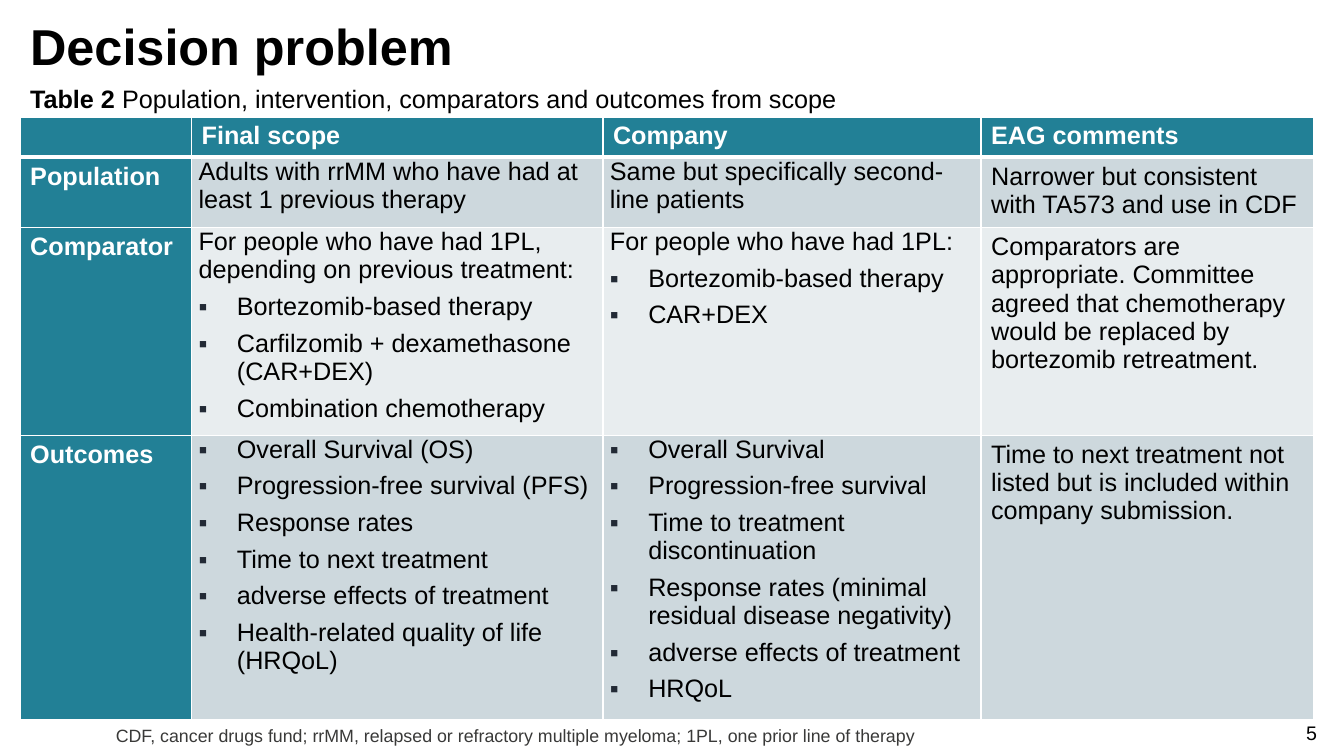
import pptx
import pptx.util
import pptx.dml.color
import pptx.enum.text
import pptx.oxml

Inches, Pt = pptx.util.Inches, pptx.util.Pt
ALIGN = pptx.enum.text.PP_ALIGN
NS = 'xmlns:a="http://schemas.openxmlformats.org/drawingml/2006/main"'
TEAL, DARK, LIGHT = "228096", "CDD8DD", "E8EDEF"
WHITE, BLACK, GREY = "FFFFFF", "000000", "393938"


def color(text):
    return pptx.dml.color.RGBColor.from_string(text)


def apply(target, values):
    for name, value in values.items():
        setattr(target, name, value)


class Deck:
    font = "Arial"
    bullet = "▪"
    mark = "222A35"

    def __init__(self):
        self.prs = pptx.Presentation()
        apply(self.prs, {"slide_width": Inches(13.33),
                         "slide_height": Inches(7.5)})
        self.slide = self.prs.slides.add_slide(self.prs.slide_layouts[6])

    def run(self, para, text, size=18, hue=BLACK, bold=False):
        run = para.add_run()
        run.text = text
        apply(run.font, {"name": self.font, "size": Pt(size), "bold": bold})
        run.font.color.rgb = color(hue)

    def text(self, box, runs, wrap=True, **form):
        """Add a text box; each run is (text, format)."""
        shape = self.slide.shapes.add_textbox(*map(Inches, box))
        shape.text_frame.word_wrap = wrap
        para = shape.text_frame.paragraphs[0]
        apply(para, form)
        for words, style in runs:
            self.run(para, words, **style)

    def dot(self, para):
        """Turn a paragraph into a bullet with a hanging indent."""
        props = para._p.get_or_add_pPr()
        props.set("marL", str(Inches(0.38)))
        props.set("indent", str(-Inches(0.38)))
        for part in (f'<a:buClr {NS}><a:srgbClr val="{self.mark}"/></a:buClr>',
                     f'<a:buFont {NS} typeface="{self.font}"/>',
                     f'<a:buChar {NS} char="{self.bullet}"/>'):
            props.append(pptx.oxml.parse_xml(part))

    def edges(self, cell, widths):
        """Draw white borders; widths maps a side letter to points."""
        props = cell._tc.get_or_add_tcPr()
        for side, width in widths.items():
            props.append(pptx.oxml.parse_xml(
                f'<a:ln{side} {NS} w="{Pt(width)}"><a:solidFill>'
                f'<a:srgbClr val="{WHITE}"/></a:solidFill></a:ln{side}>'))

    def cell(self, cell, lines, fill, head, tight):
        """Fill a cell; a line that starts with the bullet becomes one."""
        if tight:
            apply(cell, {"margin_left": Inches(0.07), "margin_top": 0,
                         "margin_right": Inches(0.07), "margin_bottom": 0})
        frame = cell.text_frame
        for i, line in enumerate(lines):
            para = frame.add_paragraph() if i else frame.paragraphs[0]
            if len(lines) > 1:
                apply(para, {"space_before": Pt(3 if i else 0),
                             "space_after": Pt(3)})
            if line.startswith(self.bullet):
                self.dot(para)
            self.run(para, line.removeprefix(self.bullet),
                     hue=WHITE if head else BLACK, bold=head)
        cell.fill.solid()
        cell.fill.fore_color.rgb = color(fill)

    def table(self, left, top, cols, rows, data):
        box = map(Inches, (left, top, sum(cols), sum(rows)))
        table = self.slide.shapes.add_table(len(rows), len(cols), *box).table
        for col, width in zip(table.columns, cols):
            col.width = Inches(width)
        for r, (height, line) in enumerate(zip(rows, data)):
            table.rows[r].height = Inches(height)
            for c, lines in enumerate(line):
                cell = table.cell(r, c)
                head = r == 0 or c == 0
                self.edges(cell, {"L": 1, "R": 1, "T": 3 if r == 1 else 1,
                                  "B": 3 if r == 0 else 1})
                fill = TEAL if head else DARK if r % 2 else LIGHT
                self.cell(cell, lines, fill, head, r > 0 and c in (1, 2))


DATA = [
    [[], ["Final scope"], ["Company"], ["EAG comments"]],
    [["Population"],
     ["Adults with rrMM who have had at least 1 previous therapy"],
     ["Same but specifically second-line patients"],
     ["Narrower but consistent with TA573 and use in CDF"]],
    [["Comparator"],
     ["For people who have had 1PL, depending on previous treatment:",
      "▪Bortezomib-based therapy",
      "▪Carfilzomib + dexamethasone (CAR+DEX)",
      "▪Combination chemotherapy"],
     ["For people who have had 1PL:", "▪Bortezomib-based therapy",
      "▪CAR+DEX"],
     ["Comparators are appropriate. Committee agreed that chemotherapy "
      "would be replaced by bortezomib retreatment."]],
    [["Outcomes"],
     ["▪Overall Survival (OS)", "▪Progression-free survival (PFS)",
      "▪Response rates", "▪Time to next treatment",
      "▪adverse effects of treatment",
      "▪Health-related quality of life (HRQoL)"],
     ["▪Overall Survival", "▪Progression-free survival",
      "▪Time to treatment discontinuation",
      "▪Response rates (minimal residual disease negativity)",
      "▪adverse effects of treatment", "▪HRQoL"],
     ["Time to next treatment not listed but is included within "
      "company submission."]],
]


def main():
    deck = Deck()
    deck.text((0.2, 0.17, 12.74, 0.6),
              [("Decision problem", {"size": 36, "bold": True})],
              line_spacing=0.9)
    deck.text((0.2, 0.78, 8.22, 0.4),
              [("Table 2 ", {"bold": True}),
               ("Population, intervention, comparators and outcomes "
                "from scope", {})], wrap=False)
    deck.table(0.2, 1.16, (1.7, 4.08, 3.75, 3.3), (0.4, 0.69, 2.06, 2.81),
               DATA)
    deck.text((1.05, 7.14, 11.53, 0.31),
              [("CDF, cancer drugs fund; rrMM, relapsed or refractory "
                "multiple myeloma; 1PL, one prior line of therapy",
                {"size": 12.7, "hue": GREY})])
    deck.text((12.65, 7.1, 0.51, 0.4), [("5", {"size": 14})],
              alignment=ALIGN.RIGHT)
    deck.prs.save("out.pptx")


if __name__ == "__main__":
    main()
